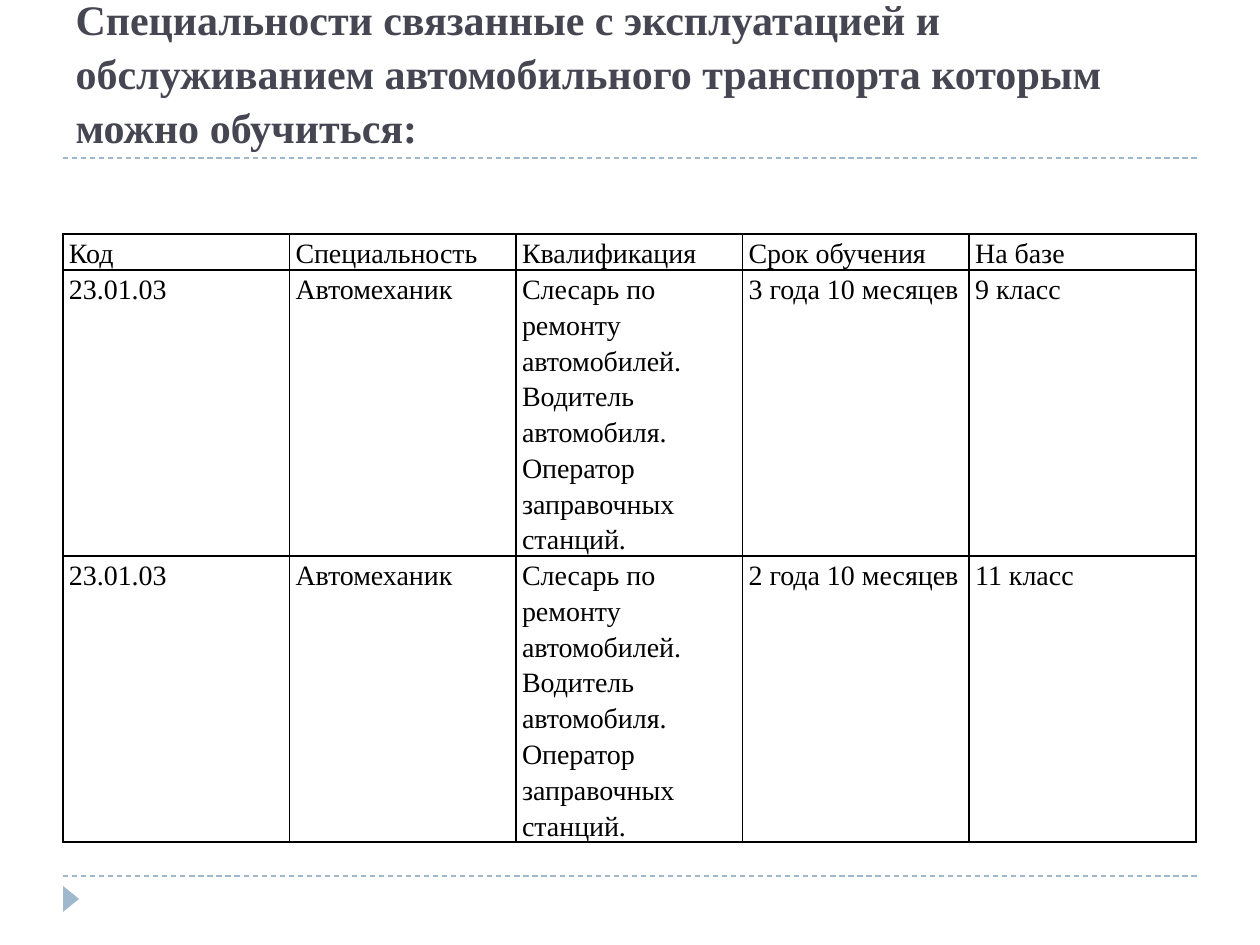
import pptx
import pptx.util
import pptx.dml.color
import pptx.enum.dml
import pptx.enum.shapes
import pptx.enum.text
import pptx.oxml.ns
from lxml import etree

# Content
TITLE = ("Специальности связанные с эксплуатацией и обслуживанием "
         "автомобильного транспорта которым можно обучиться:")
QUALIFICATION = ("Слесарь по ремонту автомобилей. Водитель автомобиля. "
                 "Оператор заправочных станций.")
ROWS = [
    ("Код", "Специальность", "Квалификация", "Срок обучения", "На базе"),
    ("23.01.03", "Автомеханик", QUALIFICATION, "3 года 10 месяцев", "9 класс"),
    ("23.01.03", "Автомеханик", QUALIFICATION, "2 года 10 месяцев", "11 класс"),
]

# Style and layout, lengths in px
COLORS = {"title": "464653", "accent": "9FB8CD", "text": "000000", "border": "000000"}
FONT = "Times New Roman"
PX = 914400 // 126
LEFT, WIDTH = 63, 1134
RULE_TOPS = (158, 876)
TABLE_TOP, TABLE_WIDTH = 234, 1133
ROW_HEIGHTS = (35, 286, 286)
CELL_INSET = 6


def px(length):
    return pptx.util.Emu(length * PX)


def rgb(name):
    return pptx.dml.color.RGBColor.from_string(COLORS[name])


def format_text(paragraph, size, color, spacing, bold=False):
    paragraph.line_spacing = spacing
    for run in paragraph.runs:
        run.font.name = FONT
        run.font.size = pptx.util.Pt(size)
        run.font.bold = bold
        run.font.color.rgb = rgb(color)


def add_rule(slide, top):
    rule = slide.shapes.add_connector(
        pptx.enum.shapes.MSO_CONNECTOR.STRAIGHT,
        px(LEFT), px(top), px(LEFT + WIDTH), px(top))
    rule.line.color.rgb = rgb("accent")
    rule.line.width = pptx.util.Pt(0.75)
    rule.line.dash_style = pptx.enum.dml.MSO_LINE.DASH
    etree.SubElement(rule._element.spPr, pptx.oxml.ns.qn("a:effectLst"))


def add_borders(cell):
    properties = cell._tc.get_or_add_tcPr()
    for position, side in enumerate(("lnL", "lnR", "lnT", "lnB")):
        border = etree.Element(pptx.oxml.ns.qn("a:" + side),
                               w=str(pptx.util.Pt(1)))
        fill = etree.SubElement(border, pptx.oxml.ns.qn("a:solidFill"))
        etree.SubElement(fill, pptx.oxml.ns.qn("a:srgbClr"), val=COLORS["border"])
        properties.insert(position, border)


def add_table(slide):
    table = slide.shapes.add_table(
        len(ROWS), len(ROWS[0]), px(LEFT), px(TABLE_TOP),
        px(TABLE_WIDTH), px(sum(ROW_HEIGHTS))).table
    table.first_row = False
    table.horz_banding = False
    for column in table.columns:
        column.width = px(TABLE_WIDTH) // len(ROWS[0])
    for row, height, texts in zip(table.rows, ROW_HEIGHTS, ROWS):
        row.height = px(height)
        for cell, text in zip(row.cells, texts):
            cell.text_frame.text = text
            cell.margin_left = cell.margin_right = px(CELL_INSET)
            cell.margin_top = cell.margin_bottom = 0
            cell.fill.background()
            add_borders(cell)
            format_text(cell.text_frame.paragraphs[0], 16, "text", 1.15)


def main():
    presentation = pptx.Presentation()
    presentation.slide_width, presentation.slide_height = px(1260), px(945)
    slide = presentation.slides.add_slide(presentation.slide_layouts[5])

    # Dashed rules and corner marker
    for top in RULE_TOPS:
        add_rule(slide, top)
    marker = slide.shapes.add_shape(
        pptx.enum.shapes.MSO_SHAPE.ISOSCELES_TRIANGLE,
        px(58), px(891), px(26), px(16))
    marker.rotation = 90
    marker.shadow.inherit = False
    marker.fill.solid()
    marker.fill.fore_color.rgb = rgb("accent")
    marker.line.fill.background()

    # Title
    title = slide.shapes.title
    title.left, title.top, title.width, title.height = map(px, (LEFT, 32, WIDTH, 126))
    frame = title.text_frame
    frame.text = TITLE
    frame.word_wrap = True
    frame.auto_size = pptx.enum.text.MSO_AUTO_SIZE.NONE
    frame.vertical_anchor = pptx.enum.text.MSO_ANCHOR.BOTTOM
    frame.paragraphs[0].alignment = pptx.enum.text.PP_ALIGN.LEFT
    format_text(frame.paragraphs[0], 24, "title", 1.07, bold=True)

    add_table(slide)
    presentation.save("out.pptx")


if __name__ == "__main__":
    main()
